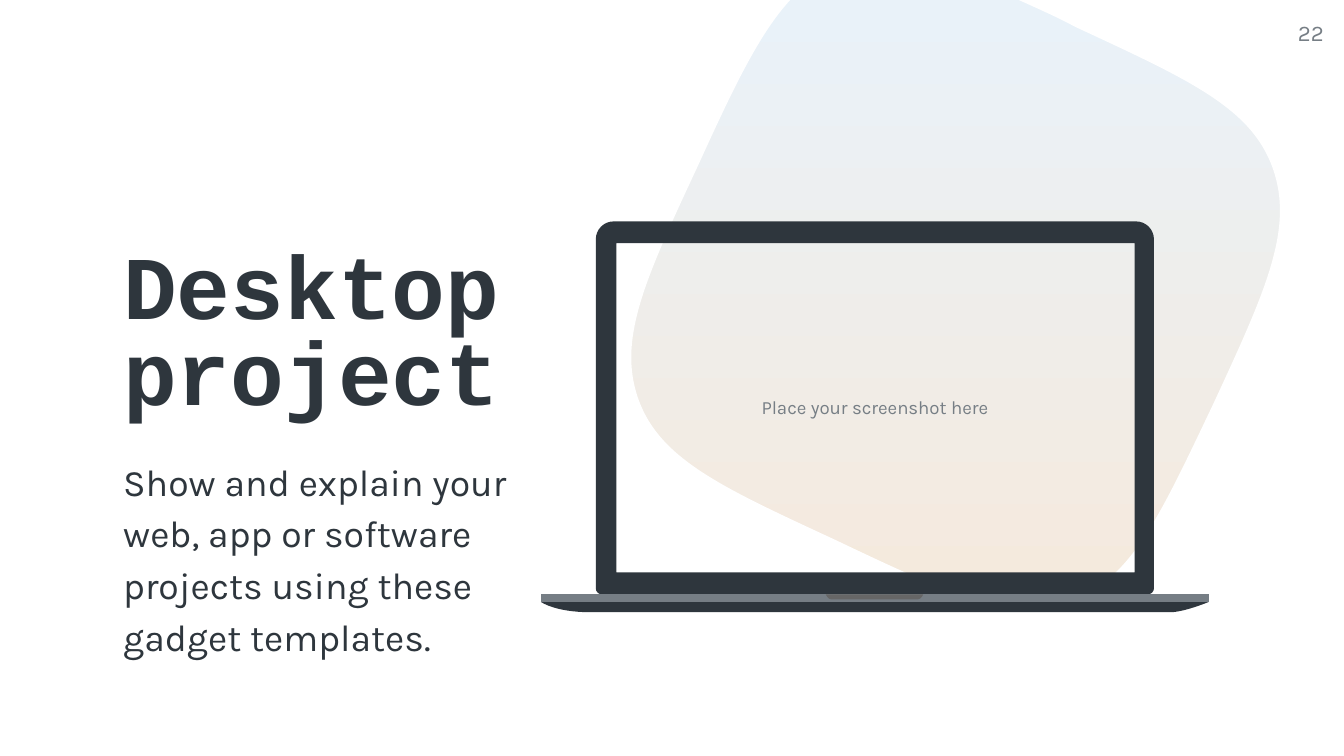
import dataclasses
import typing

import lxml.etree
import pptx
import pptx.dml.color
import pptx.enum.text
import pptx.oxml.ns
import pptx.util

Pt = pptx.util.Pt
qn = pptx.oxml.ns.qn
Align = pptx.enum.text.PP_ALIGN
Anchor = pptx.enum.text.MSO_ANCHOR
Point = tuple[float, float]
UNITS_PER_POINT = 100


@dataclasses.dataclass(frozen=True)
class Theme:
    dark: str = "2E363D"
    gray: str = "767E85"
    notch: str = "666666"
    white: str = "FFFFFF"
    sky: str = "E9F2F9"
    sand: str = "F8E7D5"
    heading_font: str = "Courier New"
    body_font: str = "Karla"
    heading_size: float = 48
    body_size: float = 20
    number_size: float = 12
    caption_size: float = 10


class Box(typing.NamedTuple):
    left: float
    top: float
    width: float
    height: float


class Curve(typing.NamedTuple):
    """Cubic curve from the current point, through two controls, to end."""
    first: Point
    second: Point
    end: Point


@dataclasses.dataclass(frozen=True)
class Outline:
    """Filled figure: each contour is a list of corner points and curves."""
    color: str
    contours: list[list]


THEME = Theme()
PAGE = Box(0, 0, 720, 405)

BLOB = [
    (545.8, 0),
    Curve((555.1, 4.3), (565.2, 8.6), (576, 14.4)),
    Curve((636.5, 42.5), (670.3, 57.6), (681.8, 90)),
    Curve((693.4, 122.4), (678.2, 155.5), (650.2, 216)),
    Curve((621.4, 276.5), (606.2, 310.3), (573.8, 321.8)),
    Curve((541.4, 333.4), (508.3, 318.2), (447.8, 289.4)),
    Curve((387.4, 261.4), (353.5, 246.2), (342, 213.8)),
    Curve((330.5, 181.4), (346.3, 148.3), (374.4, 87.8)),
    Curve((393.1, 46.8), (406.8, 18), (423.4, 0)),
]
MASK = Outline(THEME.white, [BLOB + [(0, 0), (0, 405), (720, 405), (720, 0)]])

LID = [
    (608.6, 118.6), (328.8, 118.6),
    Curve((323.4, 118.6), (319.2, 123), (319.2, 128.2)),
    (319.2, 315.2),
    Curve((319.2, 317), (320.7, 318.4), (322.5, 318.4)),
    (614.9, 318.4),
    Curve((616.7, 318.4), (618.2, 317), (618.2, 315.2)),
    (618.2, 128.2),
    Curve((618.2, 123), (614, 118.6), (608.6, 118.6)),
]
SCREEN = [(607.8, 306.6), (330.2, 306.6), (330.2, 130.2), (607.8, 130.2)]
FOOT = [
    (289.8, 322.5),
    Curve((289.8, 322.5), (297.4, 328), (316.1, 328)),
    (627.1, 328),
    Curve((634.3, 328), (647.6, 322.5), (647.6, 322.5)),
]
HINGE = [(289.8, 322.5), (647.6, 322.5), (647.6, 318.4), (289.8, 318.4)]
NOTCH = [
    (442.4, 318.4),
    Curve((442.4, 318.4), (443.5, 321.1), (445.3, 321.1)),
    (491.8, 321.1),
    Curve((493.6, 321.1), (494.6, 318.4), (494.6, 318.4)),
]
LAPTOP = [
    Outline(THEME.dark, [LID, SCREEN]),
    Outline(THEME.dark, [FOOT]),
    Outline(THEME.gray, [HINGE]),
    Outline(THEME.notch, [NOTCH]),
]


def rgb(color: str) -> pptx.dml.color.RGBColor:
    return pptx.dml.color.RGBColor.from_string(color)


def anchor_points(contour: list) -> list[Point]:
    ends = [part.end if isinstance(part, Curve) else part for part in contour]
    return [(x * UNITS_PER_POINT, y * UNITS_PER_POINT) for x, y in ends]


def bend_segments(shape, outline: Outline, origin: Point) -> None:
    """Turn the straight segments that stand for curves into cubic ones."""
    parts = [part for contour in outline.contours for part in contour[1:]]
    segments = list(shape._element.iter(qn("a:lnTo")))
    for part, segment in zip(parts, segments):
        if not isinstance(part, Curve):
            continue
        cubic = lxml.etree.Element(qn("a:cubicBezTo"))
        for x, y in part:
            node = lxml.etree.SubElement(cubic, qn("a:pt"))
            node.set("x", str(round(x * UNITS_PER_POINT - origin[0])))
            node.set("y", str(round(y * UNITS_PER_POINT - origin[1])))
        segment.getparent().replace(segment, cubic)


def draw_outline(shapes, outline: Outline):
    contours = [anchor_points(contour) for contour in outline.contours]
    builder = shapes.build_freeform(*contours[0][0], scale=Pt(1) / UNITS_PER_POINT)
    builder.add_line_segments(contours[0][1:], close=True)
    for points in contours[1:]:
        builder.move_to(*points[0])
        builder.add_line_segments(points[1:], close=True)
    shape = builder.convert_to_shape()
    origin = tuple(min(point[axis] for points in contours for point in points)
                   for axis in (0, 1))
    bend_segments(shape, outline, origin)
    shape.shadow.inherit = False
    shape.fill.solid()
    shape.fill.fore_color.rgb = rgb(outline.color)
    shape.line.fill.background()
    return shape


def place_frame(shape, box: Box, anchor=Anchor.TOP, inset: float = 0):
    shape.left, shape.top, shape.width, shape.height = map(Pt, box)
    frame = shape.text_frame
    frame.word_wrap = True
    frame.auto_size = pptx.enum.text.MSO_AUTO_SIZE.NONE
    frame.vertical_anchor = anchor
    frame.margin_left = frame.margin_right = Pt(inset)
    frame.margin_top = frame.margin_bottom = Pt(inset)
    return frame


def write_text(para, text: str, *, size: float, color: str,
               font: str = THEME.body_font, bold: bool = False,
               align=Align.LEFT, line_spacing: float = 1, gap: float = 0) -> None:
    para.text = text
    para.alignment = align
    para.line_spacing = line_spacing
    para.space_before = para.space_after = Pt(gap)
    for span in para.runs:
        span.font.name = font
        span.font.size = Pt(size)
        span.font.bold = bold
        span.font.color.rgb = rgb(color)


def paint_background(slide) -> None:
    fill = slide.background.fill
    fill.gradient()
    fill.gradient_angle = 270
    for stop, color in zip(fill.gradient_stops, (THEME.sky, THEME.sand)):
        stop.color.rgb = rgb(color)


def main() -> None:
    deck = pptx.Presentation()
    deck.slide_width, deck.slide_height = Pt(PAGE.width), Pt(PAGE.height)
    # Section Header: its body placeholder holds heading and text together
    slide = deck.slides.add_slide(deck.slide_layouts[2])
    shapes = slide.shapes
    title, body = slide.placeholders
    title._element.getparent().remove(title._element)

    paint_background(slide)
    mask = draw_outline(shapes, MASK)
    body._element.addprevious(mask._element)

    caption = place_frame(shapes.add_textbox(0, 0, 0, 0), Box(329.6, 129.6, 278, 177),
                          anchor=Anchor.MIDDLE, inset=7.2)
    write_text(caption.paragraphs[0], "Place your screenshot here",
               size=THEME.caption_size, color=THEME.gray, align=Align.CENTER)
    number = place_frame(shapes.add_textbox(0, 0, 0, 0), Box(666, 10, 43.2, 31))
    write_text(number.paragraphs[0], "22", size=THEME.number_size,
               color=THEME.gray, align=Align.RIGHT)

    laptop = shapes.add_group_shape()
    for outline in LAPTOP:
        draw_outline(laptop.shapes, outline)

    frame = place_frame(body, Box(66, 64.8, 237, 288), anchor=Anchor.BOTTOM)
    write_text(frame.paragraphs[0], "Desktop\vproject", size=THEME.heading_size,
               color=THEME.dark, font=THEME.heading_font, bold=True, line_spacing=0.8)
    write_text(frame.add_paragraph(), "Show and explain your web, app or software "
               "projects using these gadget templates.", size=THEME.body_size,
               color=THEME.dark, line_spacing=1.15, gap=16)
    deck.save("out.pptx")


if __name__ == "__main__":
    main()
